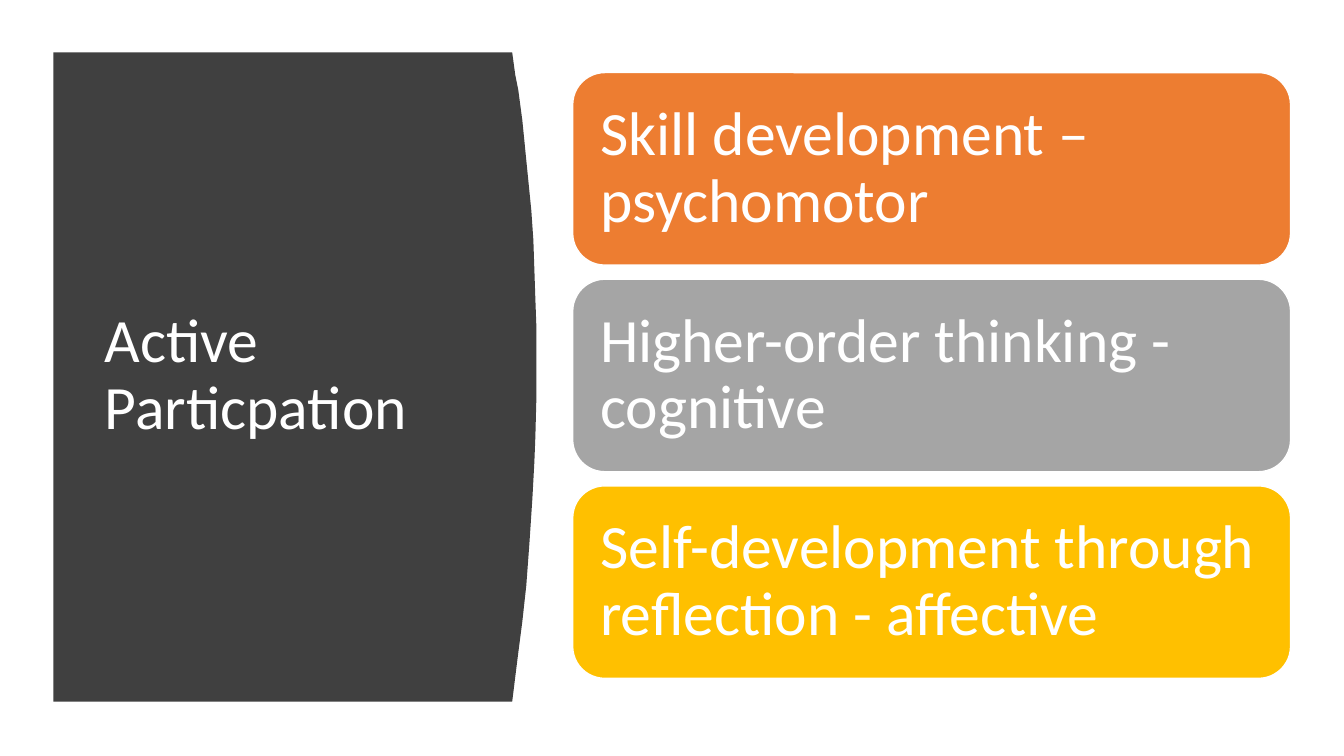
"""Builds the Active Participation slide: a curved title panel and three outcome cards."""
from pptx import Presentation
from pptx.dml.color import RGBColor
from pptx.enum.shapes import MSO_SHAPE
from pptx.enum.text import MSO_ANCHOR, PP_ALIGN
from pptx.util import Pt

PX = 9144
WHITE = RGBColor(0xFF, 0xFF, 0xFF)
CHARCOAL = RGBColor(0x40, 0x40, 0x40)
ORANGE = RGBColor(0xED, 0x7D, 0x31)
GREY = RGBColor(0xA5, 0xA5, 0xA5)
GOLD = RGBColor(0xFF, 0xC0, 0x00)


def write(shape, text, inset_x, inset_y, size=44, color=WHITE, font="Calibri"):
    frame = shape.text_frame
    frame.word_wrap = True
    frame.vertical_anchor = MSO_ANCHOR.MIDDLE
    frame.margin_left = frame.margin_right = inset_x * PX
    frame.margin_top = frame.margin_bottom = inset_y * PX
    paragraph = frame.paragraphs[0]
    paragraph.alignment = PP_ALIGN.LEFT
    paragraph.line_spacing = 0.9
    run = paragraph.add_run()
    run.text = text
    run.font.name = font
    run.font.size = Pt(size)
    run.font.color.rgb = color


presentation = Presentation()
presentation.slide_width = 1333 * PX
presentation.slide_height = 750 * PX
slide = presentation.slides.add_slide(presentation.slide_layouts[6])

curved_edge = [
    (508, 52), (511, 74), (514, 89), (518, 119), (521, 149), (524, 179),
    (527, 209), (529, 238), (530, 268), (531, 297), (532, 325), (532, 394),
    (531, 433), (530, 458), (528, 495), (525, 540), (522, 581), (518, 617),
    (514, 648), (511, 672), (508, 696),
]
outline = slide.shapes.build_freeform(53, 52, scale=PX)
outline.add_line_segments(curved_edge + [(53, 696)], close=True)
panel = outline.convert_to_shape()
panel.shadow.inherit = False
panel.fill.solid()
panel.fill.fore_color.rgb = CHARCOAL
panel.line.fill.background()

title = slide.shapes.add_textbox(94 * PX, 111 * PX, 374 * PX, 524 * PX)
write(title, "Active Particpation", inset_x=10, inset_y=5)

outcomes = [
    ("Skill development – psychomotor", ORANGE),
    ("Higher-order thinking - cognitive", GREY),
    ("Self-development through reflection - affective", GOLD),
]
CARD_TOP, CARD_HEIGHT, CARD_GAP = 72, 191, 14
for row, (outcome, color) in enumerate(outcomes):
    top = CARD_TOP + row * (CARD_HEIGHT + CARD_GAP)
    card = slide.shapes.add_shape(
        MSO_SHAPE.ROUNDED_RECTANGLE, 568 * PX, top * PX, 712 * PX, CARD_HEIGHT * PX)
    card.shadow.inherit = False
    card.fill.solid()
    card.fill.fore_color.rgb = color
    card.line.color.rgb = WHITE
    card.line.width = Pt(1)
    write(card, outcome, inset_x=18, inset_y=18)

presentation.save("out.pptx")
